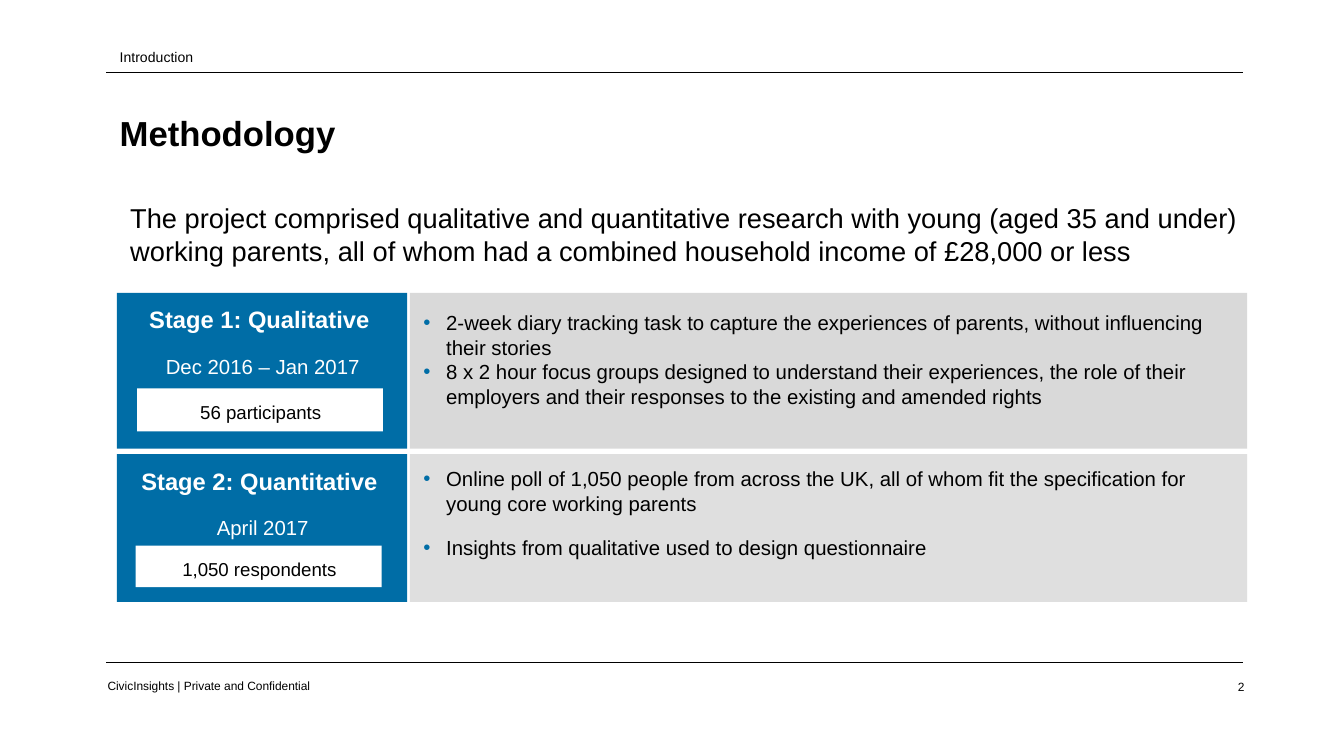
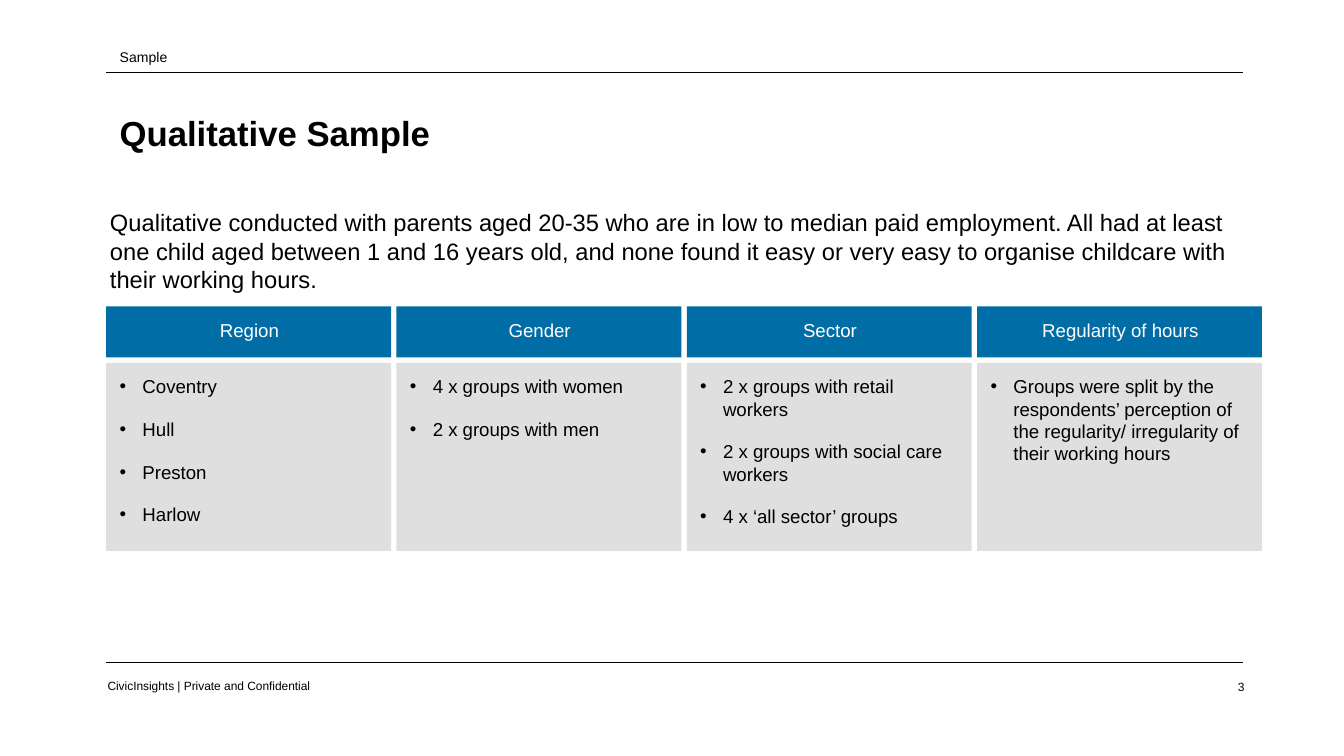
from dataclasses import dataclass, replace

from lxml.etree import SubElement
from pptx import Presentation
from pptx.dml.color import RGBColor
from pptx.enum.shapes import MSO_CONNECTOR, MSO_SHAPE
from pptx.enum.text import MSO_ANCHOR, MSO_AUTO_SIZE, PP_ALIGN
from pptx.oxml.ns import qn
from pptx.util import Inches, Pt


@dataclass(frozen=True)
class Theme:
    font: str = "Arial"
    black: str = "000000"
    white: str = "FFFFFF"
    blue: str = "006DA6"
    stage_one_grey: str = "D9D9D9"
    grey: str = "DFDFDF"
    title_size: float = 18.6
    lead_size: float = 14.6
    heading_size: float = 12.7
    text_size: float = 10.9
    cell_size: float = 10
    label_size: float = 7.5
    footer_size: float = 6.4
    space_before: float = 8.2
    space_after: float = 2.7


THEME = Theme()


@dataclass(frozen=True)
class TextStyle:
    size: float
    color: str = THEME.black
    bold: bool = False
    align: PP_ALIGN = PP_ALIGN.LEFT
    spaced: bool = False
    bullet_color: str = ""
    line_points: float = 0
    indent: float = 0


TITLE = TextStyle(THEME.title_size, bold=True)
SECTION = TextStyle(THEME.label_size)
FOOTER = TextStyle(THEME.footer_size, line_points=6.9, indent=0.01)
PAGE_NUMBER = TextStyle(THEME.footer_size, align=PP_ALIGN.RIGHT)
LEAD = TextStyle(THEME.lead_size)
SAMPLE_LEAD = TextStyle(THEME.heading_size)
STAGE_DATE = TextStyle(THEME.text_size, THEME.white, align=PP_ALIGN.CENTER, spaced=True,
                       indent=0.01)
STAGE_NAME = replace(STAGE_DATE, size=THEME.heading_size, bold=True)
COLUMN_HEAD = replace(STAGE_DATE, size=THEME.cell_size)
COUNT = replace(COLUMN_HEAD, color=THEME.black)
STAGE_BULLET = TextStyle(THEME.text_size, bullet_color=THEME.blue, indent=0.18)
SAMPLE_BULLET = TextStyle(THEME.cell_size, spaced=True, bullet_color=THEME.black,
                          indent=0.18)


def rgb(color):
    return RGBColor.from_string(color)


def set_bullet(para, style):
    """Indent the paragraph and give it a coloured bullet, or clear an inherited one."""
    properties = para._p.get_or_add_pPr()
    properties.set("marL", str(Inches(style.indent)))
    properties.set("indent", str(Inches(-0.17 if style.bullet_color else 0)))
    if not style.bullet_color:
        SubElement(properties, qn("a:buNone"))
        return
    bullet_color = SubElement(properties, qn("a:buClr"))
    SubElement(bullet_color, qn("a:srgbClr"), val=style.bullet_color)
    SubElement(properties, qn("a:buFont"), typeface=THEME.font)
    SubElement(properties, qn("a:buChar"), char="•")


def write(box, lines, side=0.1, top=0.05, anchor=MSO_ANCHOR.TOP):
    """Fill a shape with (text, style) paragraphs."""
    frame = box.text_frame
    frame.word_wrap = True
    frame.auto_size = MSO_AUTO_SIZE.NONE
    frame.vertical_anchor = anchor
    frame.margin_left = frame.margin_right = Inches(side)
    frame.margin_top = frame.margin_bottom = Inches(top)
    for index, (text, style) in enumerate(lines):
        para = frame.add_paragraph() if index else frame.paragraphs[0]
        para.alignment = style.align
        para.line_spacing = Pt(style.line_points) if style.line_points else 1.0
        para.space_before = Pt(THEME.space_before if style.spaced else 0)
        para.space_after = Pt(THEME.space_after if style.spaced else 0)
        set_bullet(para, style)
        span = para.add_run()
        span.text = text
        span.font.name = THEME.font
        span.font.size = Pt(style.size)
        span.font.bold = style.bold
        span.font.color.rgb = rgb(style.color)


def place(box, left, top, width, height):
    box.left, box.top = Inches(left), Inches(top)
    box.width, box.height = Inches(width), Inches(height)
    return box


def add_text(page, area, text, style, **margins):
    box = page.shapes.add_textbox(*map(Inches, area))
    write(box, [(text, style)], **margins)


def add_panel(page, area, fill, lines, top=0.09):
    box = page.shapes.add_shape(MSO_SHAPE.RECTANGLE, *map(Inches, area))
    box.shadow.inherit = False
    box.fill.solid()
    box.fill.fore_color.rgb = rgb(fill)
    box.line.fill.background()
    write(box, lines, side=0.09, top=top)


def add_rule(page, height):
    rule = page.shapes.add_connector(
        MSO_CONNECTOR.STRAIGHT, Inches(0.79), Inches(height), Inches(9.25), Inches(height))
    rule.line.color.rgb = rgb(THEME.black)
    rule.line.width = Pt(0.75)
    SubElement(rule._element.spPr, qn("a:effectLst"))


def add_page(deck, section, title, number):
    """Start a page with its rules, title, section label and footer."""
    page = deck.slides.add_slide(deck.slide_layouts[1])
    for height in (0.54, 4.93):
        add_rule(page, height)
    heading, label = page.placeholders
    write(place(heading, 0.79, 0.78, 8.47, 0.7), [(title, TITLE)])
    write(place(label, 0.79, 0.35, 4.7, 0.15), [(section, SECTION)],
          anchor=MSO_ANCHOR.MIDDLE)
    add_text(page, (0.79, 5.06, 2.05, 0.1), "CivicInsights | Private and Confidential",
             FOOTER, side=0, top=0)
    add_text(page, (8.98, 5.06, 0.28, 0.15), str(number), PAGE_NUMBER, side=0, top=0)
    return page


def add_stage(page, top, height, name, date, count, count_area, fill, bullets,
              bullet_style, bullet_top):
    add_panel(page, (0.87, top, 2.16, height), THEME.blue,
              [(name, STAGE_NAME), (date, STAGE_DATE)])
    add_panel(page, (3.05, top, 6.23, height), fill,
              [(text, bullet_style) for text in bullets], bullet_top)
    add_panel(page, count_area, THEME.white, [(count, COUNT)])


def add_methodology(deck):
    page = add_page(deck, "Introduction", "Methodology", 2)
    add_text(page, (0.87, 1.45, 8.45, 0.59),
             "The project comprised qualitative and quantitative research with young "
             "(aged 35 and under) working parents, all of whom had a combined household "
             "income of £28,000 or less", LEAD)
    add_stage(page, 2.18, 1.16, "Stage 1: Qualitative ", "Dec 2016 – Jan 2017",
              "56 participants", (1.02, 2.89, 1.83, 0.32), THEME.stage_one_grey,
              ["2-week diary tracking task to capture the experiences of parents, "
               "without influencing their stories",
               "8 x 2 hour focus groups designed to understand their experiences, the "
               "role of their employers and their responses to the existing and "
               "amended rights"],
              STAGE_BULLET, 0.13)
    add_stage(page, 3.38, 1.1, "Stage 2: Quantitative ", "April 2017",
              "1,050 respondents", (1.01, 4.06, 1.83, 0.31), THEME.grey,
              ["Online poll of 1,050 people from across the UK, all of whom fit the "
               "specification for young core working parents",
               "Insights from qualitative used to design questionnaire"],
              replace(STAGE_BULLET, spaced=True), 0.09)


def add_sample(deck):
    page = add_page(deck, "Sample", "Qualitative Sample", 3)
    add_text(page, (0.72, 1.5, 8.6, 0.57),
             "Qualitative conducted with parents aged 20-35 who are in low to median "
             "paid employment. All had at least one child aged between 1 and 16 years "
             "old, and none found it easy or very easy to organise childcare with their "
             "working hours.", SAMPLE_LEAD)
    columns = {
        "Region": ["Coventry", "Hull", "Preston", "Harlow"],
        "Gender": ["4 x groups with women", "2 x groups with men"],
        "Sector": ["2 x groups with retail workers",
                   "2 x groups with social care workers",
                   "4 x ‘all sector’ groups"],
        "Regularity of hours": ["Groups were split by the respondents’ perception of the "
                                "regularity/ irregularity of their working hours"],
    }
    for index, (head, items) in enumerate(columns.items()):
        left = 0.79 + index * 2.16
        add_panel(page, (left, 2.28, 2.12, 0.38), THEME.blue, [(head, COLUMN_HEAD)])
        add_panel(page, (left, 2.7, 2.12, 1.4), THEME.grey,
                  [(item, SAMPLE_BULLET) for item in items])


def main():
    deck = Presentation()
    deck.slide_width, deck.slide_height = Inches(10), Inches(10 * 9 / 16)
    add_methodology(deck)
    add_sample(deck)
    deck.save("out.pptx")


if __name__ == "__main__":
    main()
